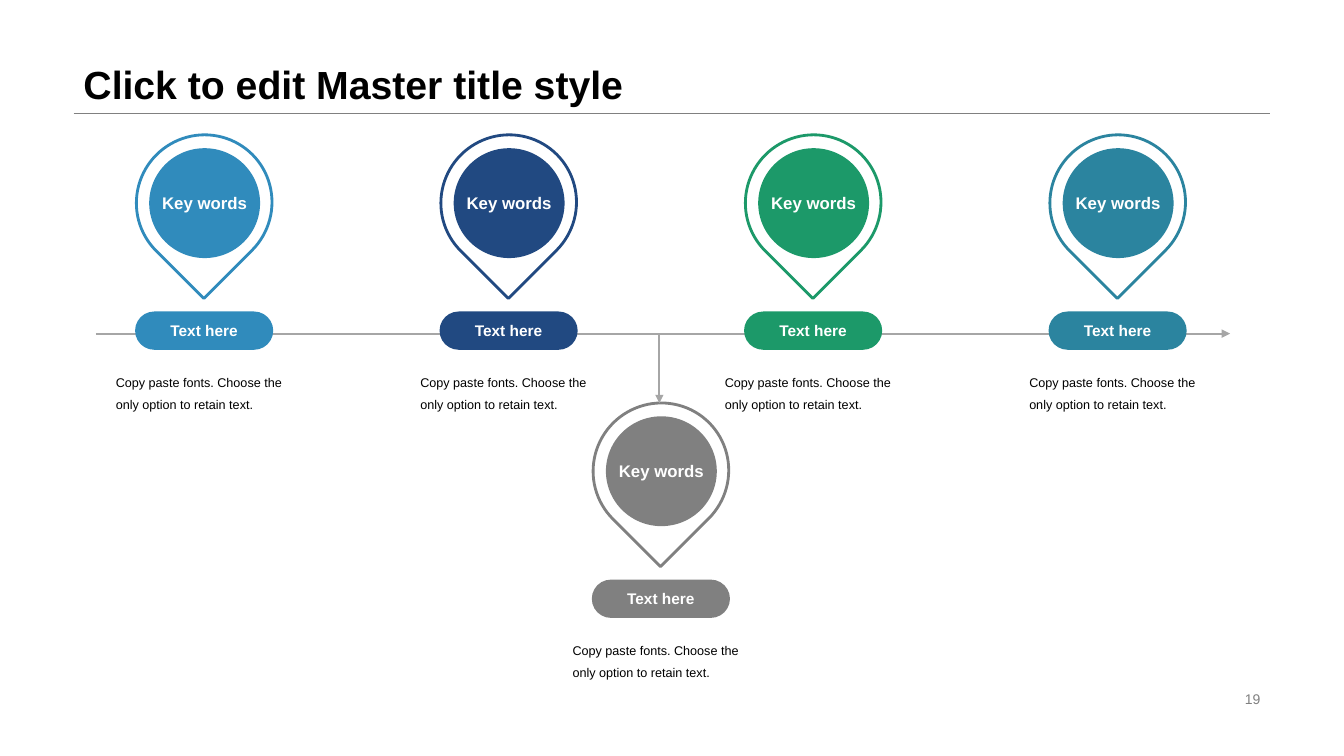
import pptx
import pptx.util
import pptx.dml.color
import pptx.enum.shapes
import pptx.enum.text
import pptx.oxml.ns
import lxml.etree
from dataclasses import dataclass

Inches = pptx.util.Inches
Shape = pptx.enum.shapes.MSO_SHAPE
Align = pptx.enum.text.PP_ALIGN
Anchor = pptx.enum.text.MSO_ANCHOR


@dataclass(frozen=True)
class Theme:
    font: str = "Arial"
    ink: str = "000000"
    paper: str = "FFFFFF"
    muted: str = "808080"
    timeline: str = "A6A6A6"
    title_size: float = 28
    keyword_size: float = 12
    label_size: float = 11
    number_size: float = 10
    body_size: float = 9
    rule_width: float = 0.25
    arrow_width: float = 1.5
    pin_width: float = 2


THEME = Theme()
TITLE = "Click to edit Master title style"
PAGE_NUMBER = "19"
BODY = "Copy paste fonts. Choose the only option to retain text."
MILESTONES = [
    ("Key words", "Text here", BODY, "308BBC"),
    ("Key words", "Text here", BODY, "214981"),
    ("Key words", "Text here", BODY, "1C9969"),
    ("Key words", "Text here", BODY, "2B849F"),
]
BRANCH = ("Key words", "Text here", BODY, THEME.muted)

FIRST_LEFT, ROW_TOP, STEP = 1.35, 1.34, 3.02
BRANCH_LEFT, BRANCH_TOP = FIRST_LEFT + 1.5 * STEP, 4
TIMELINE_Y, BRANCH_X = 3.31, 6.54


def rgb(color):
    return pptx.dml.color.RGBColor.from_string(color)


def write(frame, text, size, color, bold=False, align=Align.LEFT,
          anchor=Anchor.TOP, spacing=None, wrap=True):
    frame.word_wrap = wrap
    frame.vertical_anchor = anchor
    paragraph = frame.paragraphs[0]
    paragraph.text = text
    paragraph.alignment = align
    paragraph.line_spacing = spacing
    paragraph.font.name = THEME.font
    paragraph.font.size = pptx.util.Pt(size)
    paragraph.font.bold = bold
    paragraph.font.color.rgb = rgb(color)


def add_text(slide, box, text, size, color, **style):
    area = slide.shapes.add_textbox(*map(Inches, box))
    write(area.text_frame, text, size, color, **style)


def add_filled(slide, kind, box, fill, outline=None):
    shape = slide.shapes.add_shape(kind, *map(Inches, box))
    shape.shadow.inherit = False
    shape.fill.solid()
    shape.fill.fore_color.rgb = rgb(fill)
    if outline:
        shape.line.color.rgb = rgb(outline)
        shape.line.width = pptx.util.Pt(THEME.pin_width)
    else:
        shape.line.fill.background()
    return shape


def add_line(slide, ends, color, width, arrow=False):
    line = slide.shapes.add_connector(
        pptx.enum.shapes.MSO_CONNECTOR.STRAIGHT, *map(Inches, ends))
    line.line.color.rgb = rgb(color)
    line.line.width = pptx.util.Pt(width)
    if arrow:
        outline = line.line._get_or_add_ln()
        lxml.etree.SubElement(
            outline, pptx.oxml.ns.qn("a:tailEnd"), type="triangle")
    lxml.etree.SubElement(
        line._element.spPr, pptx.oxml.ns.qn("a:effectLst"))


def add_milestone(slide, left, top, milestone):
    keyword, label, body, color = milestone
    pin = add_filled(slide, Shape.TEAR, (left, top, 1.35, 1.34),
                     THEME.paper, color)
    pin.rotation = 135
    disc = add_filled(slide, Shape.OVAL,
                      (left + 0.13, top + 0.13, 1.1, 1.09), color)
    pill = add_filled(slide, Shape.ROUNDED_RECTANGLE,
                      (left - 0.01, top + 1.75, 1.37, 0.38), color)
    pill.adjustments[0] = 0.5
    for shape, text, size in ((disc, keyword, THEME.keyword_size),
                              (pill, label, THEME.label_size)):
        write(shape.text_frame, text, size, THEME.paper, bold=True,
              align=Align.CENTER, anchor=Anchor.MIDDLE, wrap=False)
    add_text(slide, (left - 0.3, top + 2.25, 2.09, 0.55), body,
             THEME.body_size, THEME.ink, spacing=1.5)


def main():
    deck = pptx.Presentation()
    deck.slide_width, deck.slide_height = Inches(13.33), Inches(7.5)
    slide = deck.slides.add_slide(deck.slide_layouts[6])

    add_line(slide, (0.73, 1.12, 12.6, 1.12), THEME.muted, THEME.rule_width)
    add_text(slide, (0.73, 0, 11.87, 1.12), TITLE, THEME.title_size,
             THEME.ink, bold=True, anchor=Anchor.BOTTOM, spacing=0.9)
    add_text(slide, (9.42, 6.82, 3.18, 0.23), PAGE_NUMBER, THEME.number_size,
             THEME.muted, align=Align.RIGHT, anchor=Anchor.MIDDLE)

    add_line(slide, (0.95, TIMELINE_Y, 12.2, TIMELINE_Y),
             THEME.timeline, THEME.arrow_width, arrow=True)
    for index, milestone in enumerate(MILESTONES):
        add_milestone(slide, FIRST_LEFT + index * STEP, ROW_TOP, milestone)
    add_milestone(slide, BRANCH_LEFT, BRANCH_TOP, BRANCH)
    add_line(slide, (BRANCH_X, TIMELINE_Y, BRANCH_X, BRANCH_TOP),
             THEME.timeline, THEME.arrow_width, arrow=True)

    deck.save("out.pptx")


if __name__ == "__main__":
    main()
